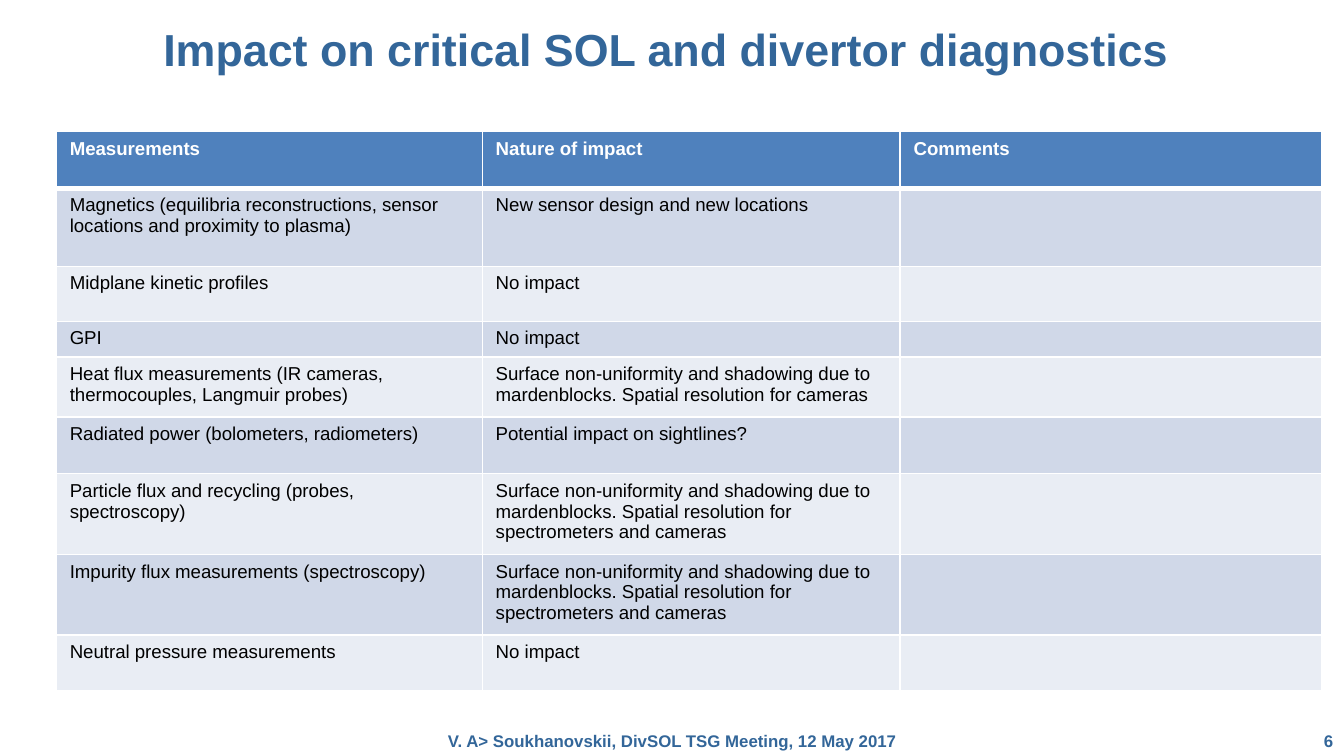
from pptx import Presentation
from pptx.dml.color import RGBColor as Rgb
from pptx.enum.text import MSO_ANCHOR as Anchor, PP_ALIGN as Align
from pptx.oxml.ns import qn
from pptx.util import Pt
from lxml.etree import SubElement as Sub

WHITE = Rgb(0xFF, 0xFF, 0xFF)
BLACK = Rgb(0, 0, 0)
NAVY = Rgb(0x33, 0x66, 0x99)
BLUE = Rgb(0x4F, 0x81, 0xBD)
PALE = Rgb(0xD0, 0xD8, 0xE8)
LIGHT = Rgb(0xE9, 0xED, 0xF4)

COLS = [228.2, 223.9, 226.1]
ROWS = [30.4, 41.8, 29.5, 18.5, 32, 30.4, 40.7, 40.7, 30]
SHADE = "Surface non-uniformity and shadowing due to mardenblocks. Spatial resolution for "
WIDE = SHADE + "spectrometers and cameras"
DATA = [
    ("Measurements", "Nature of impact", "Comments"),
    ("Magnetics (equilibria reconstructions, sensor locations and proximity to plasma)",
     "New sensor design and new locations", ""),
    ("Midplane kinetic profiles", "No impact", ""),
    ("GPI", "No impact", ""),
    ("Heat flux measurements (IR cameras, thermocouples, Langmuir probes)",
     SHADE + "cameras", ""),
    ("Radiated power (bolometers, radiometers)", "Potential impact on sightlines?", ""),
    ("Particle flux and recycling (probes, spectroscopy)", WIDE, ""),
    ("Impurity flux measurements (spectroscopy)", WIDE, ""),
    ("Neutral pressure measurements", "No impact", ""),
]


class Deck:
    face = "Arial"

    def __init__(self, wide, high):
        self.prs = Presentation()
        self.prs.slide_width, self.prs.slide_height = Pt(wide), Pt(high)
        self.slide = self.prs.slides.add_slide(self.prs.slide_layouts[5])

    def add_text(self, para, text, size, color, bold):
        run = para.add_run()
        run.text = text
        font = run.font
        font.name, font.size, font.bold = self.face, Pt(size), bold
        font.color.rgb = color

    def inset(self, frame, side, edge):
        frame.margin_left = frame.margin_right = Pt(side)
        frame.margin_top = frame.margin_bottom = Pt(edge)
        frame.word_wrap = True

    def title(self, text, x, y, w, h):
        box = self.slide.shapes.title
        box.left, box.top, box.width, box.height = Pt(x), Pt(y), Pt(w), Pt(h)
        frame = box.text_frame
        self.inset(frame, 3.6, 3.6)
        frame.vertical_anchor = Anchor.MIDDLE
        para = frame.paragraphs[0]
        para.alignment, para.line_spacing = Align.CENTER, 0.85
        self.add_text(para, text, 24, NAVY, True)

    def label(self, text, x, y, w, h, align):
        box = self.slide.shapes.add_textbox(Pt(x), Pt(y), Pt(w), Pt(h))
        self.inset(box.text_frame, 0, 2.9)
        para = box.text_frame.paragraphs[0]
        para.alignment = align
        self.add_text(para, text, 9, NAVY, True)

    def edge(self, cell, side, width):
        props = cell._tc.get_or_add_tcPr()
        line = Sub(props, qn(f"a:ln{side}"), w=str(int(Pt(width))))
        fill = Sub(line, qn("a:solidFill"))
        Sub(fill, qn("a:srgbClr"), val=str(WHITE))

    def cell(self, cell, text, fill, color, head, top, base):
        for side, width in (("L", 1), ("R", 1), ("T", top), ("B", base)):
            self.edge(cell, side, width)
        cell.fill.solid()
        cell.fill.fore_color.rgb = fill
        para = cell.text_frame.paragraphs[0]
        if text:
            self.add_text(para, text, 10, color, head)
        else:
            Sub(para._p, qn("a:endParaRPr"), sz="1000")

    def table(self, data, x, y, cols, rows):
        grid = self.slide.shapes.add_table(
            len(rows), len(cols), Pt(x), Pt(y), Pt(sum(cols)), Pt(sum(rows))).table
        for col, width in zip(grid.columns, cols):
            col.width = Pt(width)
        for i, (row, high, texts) in enumerate(zip(grid.rows, rows, data)):
            row.height = Pt(high)
            head = i == 0
            fill = BLUE if head else PALE if i % 2 else LIGHT
            color = WHITE if head else BLACK
            top, base = 3 if i == 1 else 1, 3 if head else 1
            for cell, text in zip(row.cells, texts):
                self.cell(cell, text, fill, color, head, top, base)


def main():
    deck = Deck(720, 405)
    deck.label("6", 666, 388.8, 48.2, 16.6, Align.RIGHT)
    deck.label("V. A> Soukhanovskii, DivSOL TSG Meeting, 12 May 2017",
               72, 388.8, 576, 16.6, Align.CENTER)
    deck.title("Impact on critical SOL and divertor diagnostics ", 0, 0, 720, 56.9)
    deck.table(DATA, 30.2, 70.5, COLS, ROWS)
    deck.prs.save("out.pptx")


if __name__ == "__main__":
    main()
